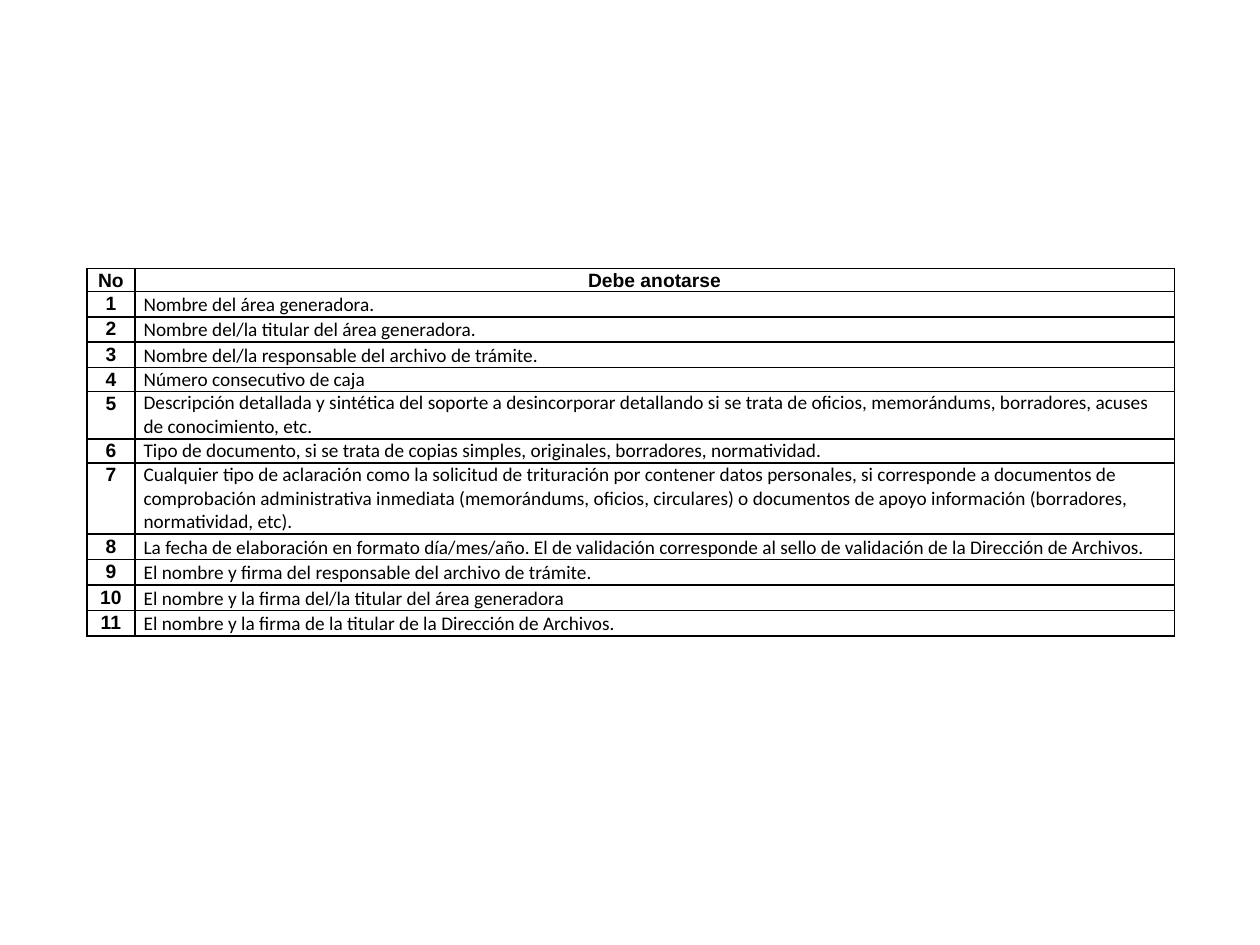
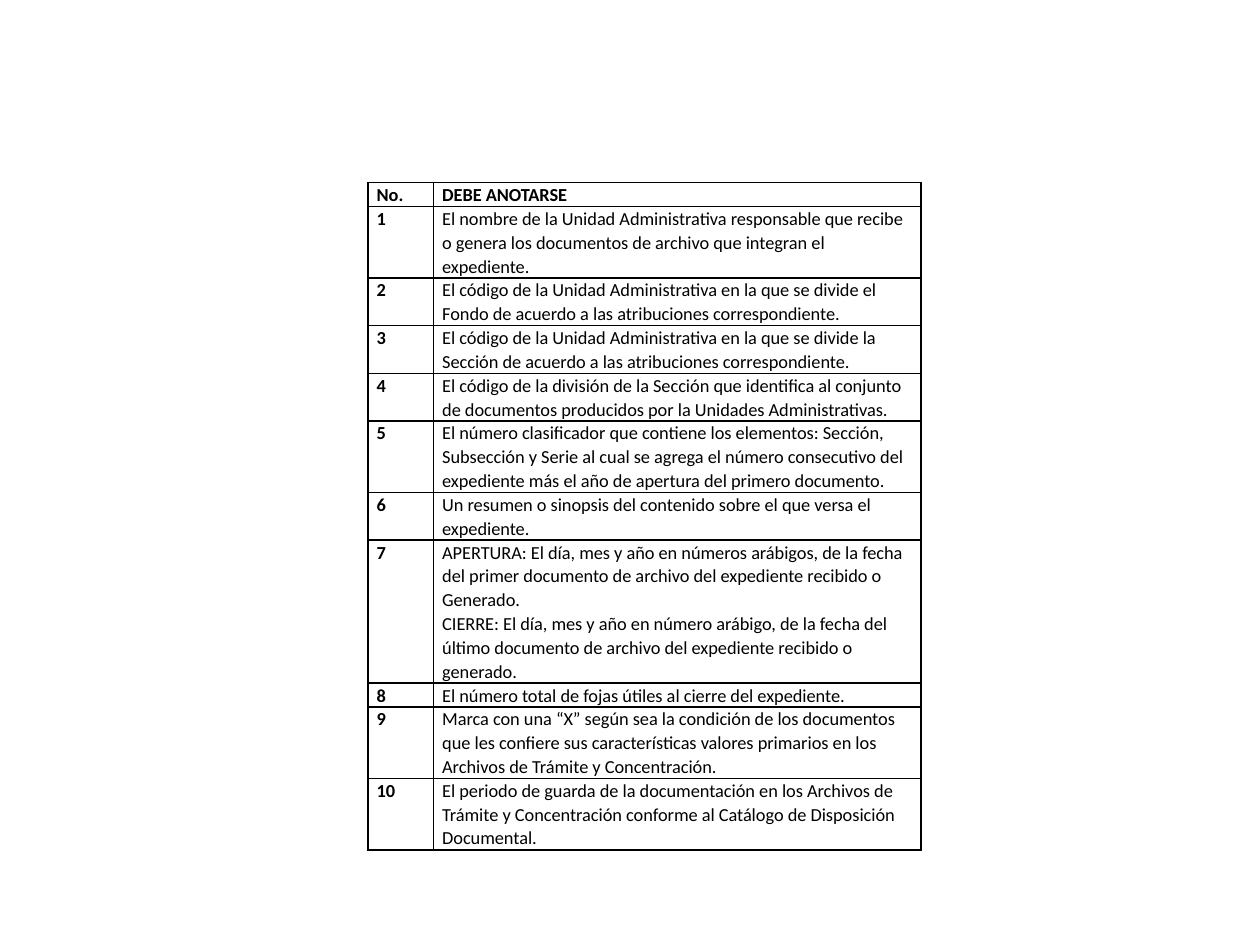
from dataclasses import dataclass
from lxml.etree import SubElement
from pptx import Presentation
from pptx.dml.color import RGBColor
from pptx.enum.text import PP_ALIGN
from pptx.oxml.ns import qn
from pptx.util import Inches, Pt


@dataclass(frozen=True)
class Theme:
    ink: str = "000000"
    paper: str = "FFFFFF"
    body_font: str = "Calibri"
    label_font: str = "Arial"
    wide_size: float = 11
    narrow_size: float = 10.5
    spacing: float = 1.07
    border: float = 1
    inset: float = 0.07
    line_height: float = 0.18


THEME = Theme()
SLIDE_W, SLIDE_H = Inches(10), Inches(7.5)

BOX_HEADER = ("No", "Debe anotarse")
BOX_ENTRIES = [
    "Nombre del área generadora.",
    "Nombre del/la titular del área generadora.",
    "Nombre del/la responsable del archivo de trámite.",
    "Número consecutivo de caja",
    "Descripción detallada y sintética del soporte a desincorporar detallando si se trata de "
    "oficios, memorándums, borradores, acuses de conocimiento, etc.",
    "Tipo de documento, si se trata de copias simples, originales, borradores, normatividad.",
    "Cualquier tipo de aclaración como la solicitud de trituración por contener datos personales, "
    "si corresponde a documentos de comprobación administrativa inmediata (memorándums, oficios, "
    "circulares) o documentos de apoyo información (borradores, normatividad, etc).",
    "La fecha de elaboración en formato día/mes/año. El de validación corresponde al sello de "
    "validación de la Dirección de Archivos.",
    "El nombre y firma del responsable del archivo de trámite.",
    "El nombre y la firma del/la titular del área generadora",
    "El nombre y la firma de la titular de la Dirección de Archivos.",
]
BOX_LINES = [1, 1, 1, 1, 1, 2, 1, 3, 1, 1, 1, 1]
BOX_SINGLE_SPACED = {4, 5, 6, 7}

FILE_HEADER = ("No.", "DEBE ANOTARSE")
FILE_ENTRIES = [
    "El nombre de la Unidad Administrativa responsable que recibe o genera los documentos de "
    "archivo que integran el expediente.",
    "El código de la Unidad Administrativa en la que se divide el Fondo de acuerdo a las "
    "atribuciones correspondiente.",
    "El código de la Unidad Administrativa en la que se divide la Sección de acuerdo a las "
    "atribuciones correspondiente.",
    "El código de la división de la Sección que identifica al conjunto de documentos producidos "
    "por la Unidades Administrativas.",
    "El número clasificador que contiene los elementos: Sección, Subsección y Serie al cual se "
    "agrega el número consecutivo del expediente más el año de apertura del primero documento.",
    "Un resumen o sinopsis del contenido sobre el que versa el expediente.",
    "APERTURA: El día, mes y año en números arábigos, de la fecha del primer documento de archivo "
    "del expediente recibido o Generado.\n"
    "CIERRE: El día, mes y año en número arábigo, de la fecha del último documento de archivo "
    "del expediente recibido o generado.",
    "El número total de fojas útiles al cierre del expediente.",
    "Marca con una “X” según sea la condición de los documentos que les confiere sus "
    "características valores primarios en los Archivos de Trámite y Concentración.",
    "El periodo de guarda de la documentación en los Archivos de Trámite y Concentración conforme "
    "al Catálogo de Disposición Documental.",
]
FILE_LINES = [1, 3, 2, 2, 2, 3, 2, 6, 1, 3, 3]


def across(percent):
    return round(SLIDE_W * percent / 100)


def down(percent):
    return round(SLIDE_H * percent / 100)


def write(tf, text, *, size, font=THEME.body_font, bold=False,
          align=PP_ALIGN.LEFT, spacing=THEME.spacing):
    for i, line in enumerate(text.split("\n")):
        p = tf.add_paragraph() if i else tf.paragraphs[0]
        p.alignment, p.line_spacing = align, spacing
        r = p.add_run()
        r.text = line
        r.font.name, r.font.size, r.font.bold = font, Pt(size), bold
        r.font.color.rgb = RGBColor.from_string(THEME.ink)


def frame_cell(cell):
    cell.margin_left = cell.margin_right = Inches(THEME.inset)
    cell.margin_top = cell.margin_bottom = 0
    tc_pr = cell._tc.get_or_add_tcPr()
    for side in ("a:lnL", "a:lnR", "a:lnT", "a:lnB"):
        ln = SubElement(tc_pr, qn(side), w=str(Pt(THEME.border)))
        fill = SubElement(ln, qn("a:solidFill"))
        SubElement(fill, qn("a:srgbClr"), val=THEME.ink)
    cell.fill.background()


def add_guide(prs, header, entries, *, left, top, widths, lines, size, label, heading,
              single_spaced=()):
    s = prs.slides.add_slide(prs.slide_layouts[6])
    s.background.fill.solid()
    s.background.fill.fore_color.rgb = RGBColor.from_string(THEME.paper)
    rows = [header] + [(str(n), text) for n, text in enumerate(entries, 1)]
    table = s.shapes.add_table(len(rows), len(header), across(left), down(top),
                               across(sum(widths)), Inches(THEME.line_height * sum(lines))).table
    table.first_row = table.horz_banding = False
    for column, width in zip(table.columns, widths):
        column.width = across(width)
    for n, (number, text) in enumerate(rows):
        table.rows[n].height = Inches(THEME.line_height * lines[n])
        number_cell, text_cell = table.cell(n, 0), table.cell(n, 1)
        frame_cell(number_cell)
        frame_cell(text_cell)
        write(number_cell.text_frame, number, size=size, **label)
        style = {} if n else heading
        spacing = 1.0 if n in single_spaced else THEME.spacing
        write(text_cell.text_frame, text, size=size, spacing=spacing, **style)


def main():
    prs = Presentation()
    prs.slide_width, prs.slide_height = SLIDE_W, SLIDE_H
    centred = dict(font=THEME.label_font, bold=True, align=PP_ALIGN.CENTER)
    strong = dict(bold=True)
    add_guide(prs, BOX_HEADER, BOX_ENTRIES, left=6.9, top=28.4, widths=(3.8, 82.5),
              lines=BOX_LINES, size=THEME.wide_size, label=centred, heading=centred,
              single_spaced=BOX_SINGLE_SPACED)
    add_guide(prs, FILE_HEADER, FILE_ENTRIES, left=29.2, top=19.33, widths=(5.2, 38.7),
              lines=FILE_LINES, size=THEME.narrow_size, label=strong, heading=strong)
    prs.save("out.pptx")


if __name__ == "__main__":
    main()
